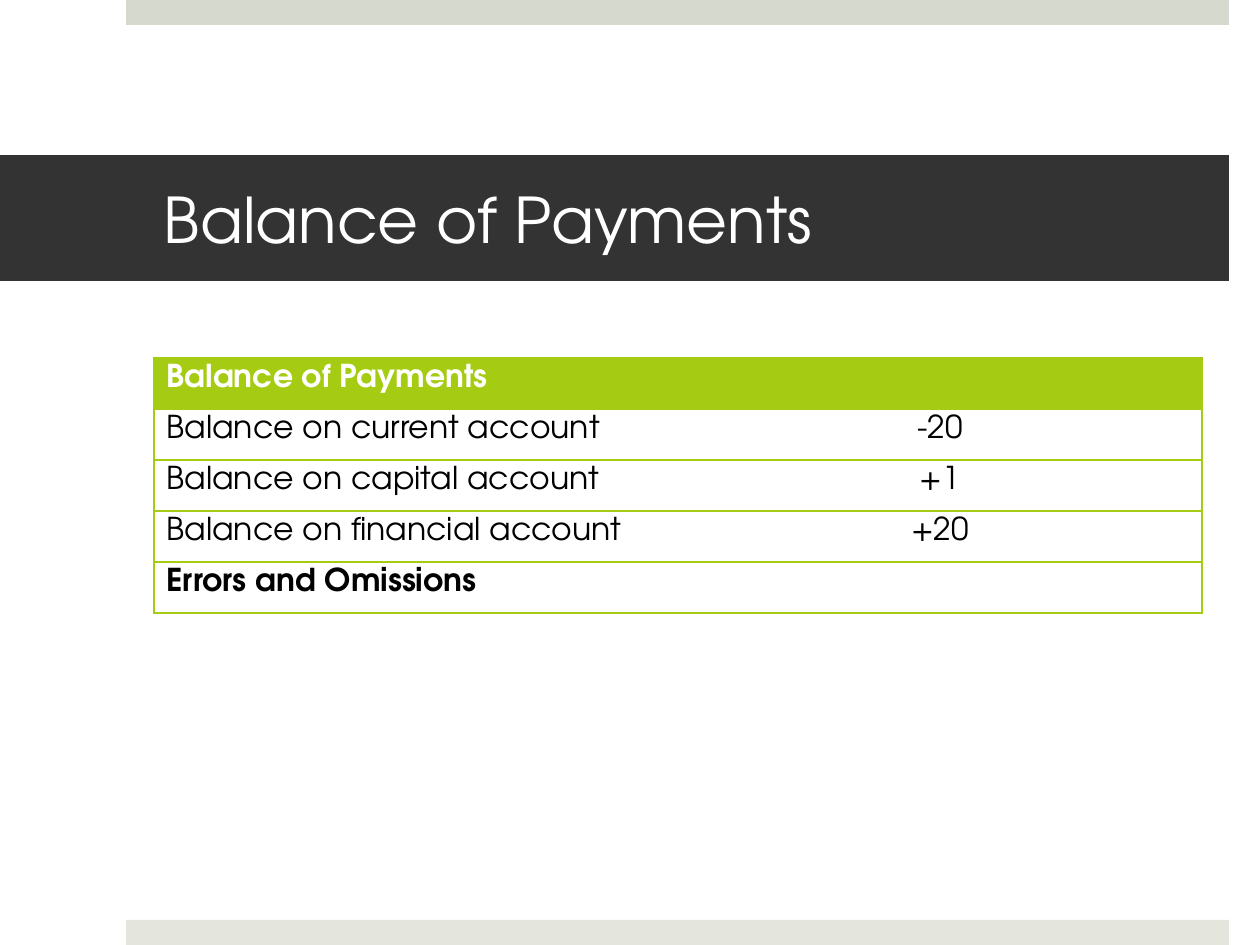
from lxml.etree import SubElement
from pptx import Presentation
from pptx.dml.color import RGBColor
from pptx.enum.shapes import MSO_SHAPE
from pptx.enum.text import MSO_ANCHOR, MSO_AUTO_SIZE, PP_ALIGN
from pptx.oxml.ns import qn
from pptx.util import Emu, Pt

PX = 914400 // 126
FONT = "TeX Gyre Adventor"
COLORS = {
    "top_bar": "D6D9CD",
    "bottom_bar": "E4E6DE",
    "title_bar": "333333",
    "green": "A5CC12",
    "white": "FFFFFF",
    "black": "000000",
}
ROWS = [
    ("Balance of Payments", ""),
    ("Balance on current account", "-20"),
    ("Balance on capital account", "+1"),
    ("Balance on financial account", "+20"),
    ("Errors and Omissions", ""),
]


def px(n):
    return Emu(n * PX)


def set_fill(obj, color):
    obj.fill.solid()
    obj.fill.fore_color.rgb = RGBColor.from_string(COLORS[color])


def write(tf, text, size=18, color="black", bold=False, align=PP_ALIGN.LEFT):
    p = tf.paragraphs[0]
    p.alignment = align
    r = p.add_run()
    r.text = text
    r.font.name = FONT
    r.font.size = Pt(size)
    r.font.bold = bold
    r.font.color.rgb = RGBColor.from_string(COLORS[color])


def add_bar(s, x, y, w, h, color):
    sp = s.shapes.add_shape(MSO_SHAPE.RECTANGLE, px(x), px(y), px(w), px(h))
    sp.shadow.inherit = False
    set_fill(sp, color)
    sp.line.fill.background()


def set_title(s, text):
    sp = s.shapes.title
    sp.left, sp.top, sp.width, sp.height = px(0), px(155), px(1229), px(126)
    set_fill(sp, "title_bar")
    tf = sp.text_frame
    tf.word_wrap = True
    tf.auto_size = MSO_AUTO_SIZE.NONE
    tf.vertical_anchor = MSO_ANCHOR.MIDDLE
    tf.margin_left, tf.margin_right = px(164), px(38)
    tf.margin_top = tf.margin_bottom = px(6)
    write(tf, text, size=36, color="white")


def set_borders(cell, sides):
    """Draw a green line on the given sides (letters of LRTB), none elsewhere."""
    tc_pr = cell._tc.get_or_add_tcPr()
    for i, side in enumerate("LRTB"):
        ln = SubElement(tc_pr, qn(f"a:ln{side}"), w=str(Pt(1)))
        if side in sides:
            fill = SubElement(ln, qn("a:solidFill"))
            SubElement(fill, qn("a:srgbClr"), val=COLORS["green"])
        else:
            SubElement(ln, qn("a:noFill"))
        tc_pr.insert(i, ln)


def add_balance_table(s, x, y, col_w, row_h):
    n_rows, n_cols = len(ROWS), len(ROWS[0])
    table = s.shapes.add_table(n_rows, n_cols, px(x), px(y),
                               px(col_w * n_cols), px(row_h * n_rows)).table
    table.horz_banding = False
    for i, row in enumerate(ROWS):
        table.rows[i].height = px(row_h)
        header = i == 0
        for j, text in enumerate(row):
            cell = table.cell(i, j)
            set_fill(cell, "green" if header else "white")
            set_borders(cell, "LTB" if j == 0 else "RTB")
            if text:
                write(cell.text_frame, text,
                      color="white" if header else "black",
                      bold=i in (0, n_rows - 1),
                      align=PP_ALIGN.CENTER if j else PP_ALIGN.LEFT)


def main():
    prs = Presentation()
    prs.slide_width, prs.slide_height = px(1260), px(945)
    s = prs.slides.add_slide(prs.slide_layouts[5])
    add_bar(s, 126, 0, 1103, 25, "top_bar")
    add_bar(s, 126, 920, 1103, 25, "bottom_bar")
    set_title(s, "Balance of Payments")
    add_balance_table(s, 154, 358, col_w=524, row_h=51)
    prs.save("out.pptx")


if __name__ == "__main__":
    main()
